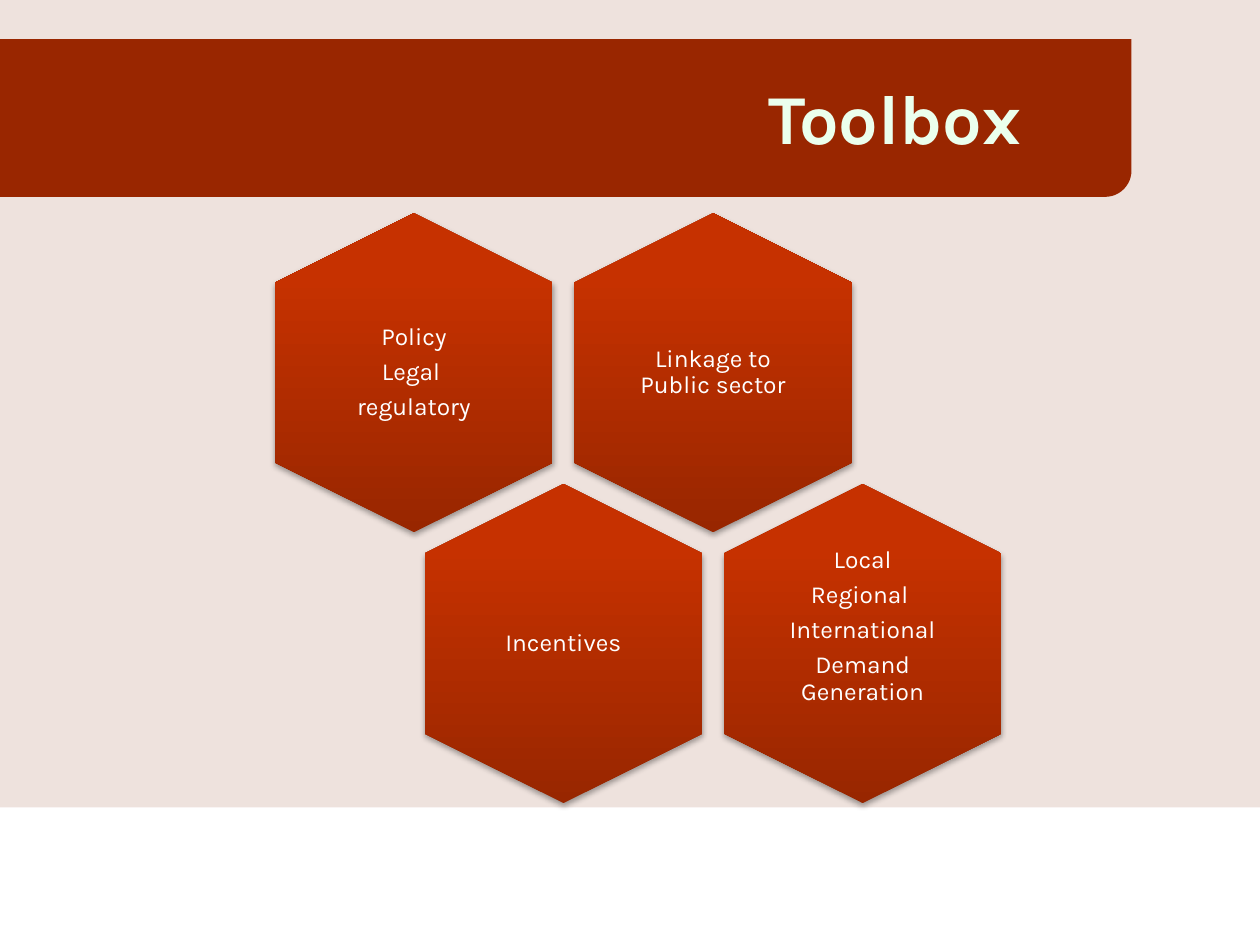
from dataclasses import dataclass

from lxml.etree import SubElement
from pptx import Presentation
from pptx.dml.color import RGBColor
from pptx.enum.shapes import MSO_SHAPE
from pptx.enum.text import MSO_ANCHOR, PP_ALIGN
from pptx.oxml import parse_xml
from pptx.oxml.ns import nsdecls, qn
from pptx.util import Cm, Pt


@dataclass(frozen=True)
class Theme:
    font: str = "Karla"
    backdrop: str = "EEE2DD"
    banner: str = "992600"
    title: str = "EBFFED"
    label: str = "FFFFFF"
    gradient: tuple = ((0, "982600"), (80, "C63100"), (100, "C73200"))
    title_size: int = 40
    label_size: int = 14


theme = Theme()


def add_block(shapes, kind, left, top, width, height, color):
    sp = shapes.add_shape(kind, Cm(left), Cm(top), Cm(width), Cm(height))
    sp.shadow.inherit = False
    sp.line.fill.background()
    sp.fill.solid()
    sp.fill.fore_color.rgb = RGBColor.from_string(color)
    return sp


def add_text(shapes, box, lines, size, color, align, bold=False):
    s = shapes.add_textbox(*(Cm(v) for v in box))
    tf = s.text_frame
    tf.word_wrap = True
    tf.vertical_anchor = MSO_ANCHOR.MIDDLE
    tf.text = "\n".join(lines)
    for p in tf.paragraphs:
        p.alignment = align
        p.font.name = theme.font
        p.font.size = Pt(size)
        p.font.bold = bold
        p.font.color.rgb = RGBColor.from_string(color)
    return tf


prs = Presentation()
prs.slide_width, prs.slide_height = Cm(25.4), Cm(19.05)
s = prs.slides.add_slide(prs.slide_layouts[6])

add_block(s.shapes, MSO_SHAPE.RECTANGLE, 0, 0, 25.4, 16.28, theme.backdrop)
add_block(s.shapes, MSO_SHAPE.ROUND_2_DIAG_RECTANGLE, -1.19, 0.79, 24, 3.18, theme.banner)
add_text(s.shapes, (0, 0.76, 20.83, 3.18), ["Toolbox"], theme.title_size, theme.title,
         PP_ALIGN.RIGHT, bold=True)

# Honeycomb: the second row is shifted by half a column.
HEX_W, HEX_H = 6.43, 5.59
LEFT, TOP = 5.13, 4.72
COL_STEP, ROW_STEP = 6.03, 5.46
LABEL_W, LABEL_H = 3.86, 4.42

# Row, column, lines, bottom inset
tools = [
    (0, 1, ["Linkage to Public sector"], 0.15),
    (0, 0, ["Policy", "Legal ", "regulatory"], 0),
    (1, 0, ["Incentives"], 0.15),
    (1, 1, ["Local", "Regional ", "International", "Demand Generation"], 0.69),
]
stops = "".join(
    f'<a:gs pos="{pos * 1000}"><a:srgbClr val="{color}"/></a:gs>' for pos, color in theme.gradient
)
honeycomb = s.shapes.add_group_shape()
for row, col, lines, bottom in tools:
    left = LEFT + (col + row / 2) * COL_STEP
    top = TOP + row * ROW_STEP
    sp = add_block(honeycomb.shapes, MSO_SHAPE.HEXAGON, left, top, HEX_W, HEX_H, theme.banner)
    sp.rotation = 90
    props = sp._element.spPr
    props.replace(props.find(qn("a:solidFill")), parse_xml(
        f'<a:gradFill {nsdecls("a")} rotWithShape="0"><a:gsLst>{stops}</a:gsLst>'
        '<a:lin ang="16200000" scaled="0"/></a:gradFill>'))
    shadow = SubElement(props.find(qn("a:effectLst")), qn("a:outerShdw"), blurRad="40000",
                        dist="23000", dir="5400000", rotWithShape="0")
    black = SubElement(shadow, qn("a:srgbClr"), val="000000")
    SubElement(black, qn("a:alpha"), val="35000")

    box = (left + (HEX_W - LABEL_W) / 2, top + (HEX_H - LABEL_H) / 2, LABEL_W, LABEL_H)
    tf = add_text(honeycomb.shapes, box, lines, theme.label_size, theme.label, PP_ALIGN.CENTER)
    tf.margin_left = tf.margin_right = tf.margin_top = Cm(0.15 if len(lines) == 1 else 0)
    tf.margin_bottom = Cm(bottom)
    for p in tf.paragraphs:
        p.line_spacing = 0.9
        p.space_after = Pt(4.9)

prs.save("out.pptx")
